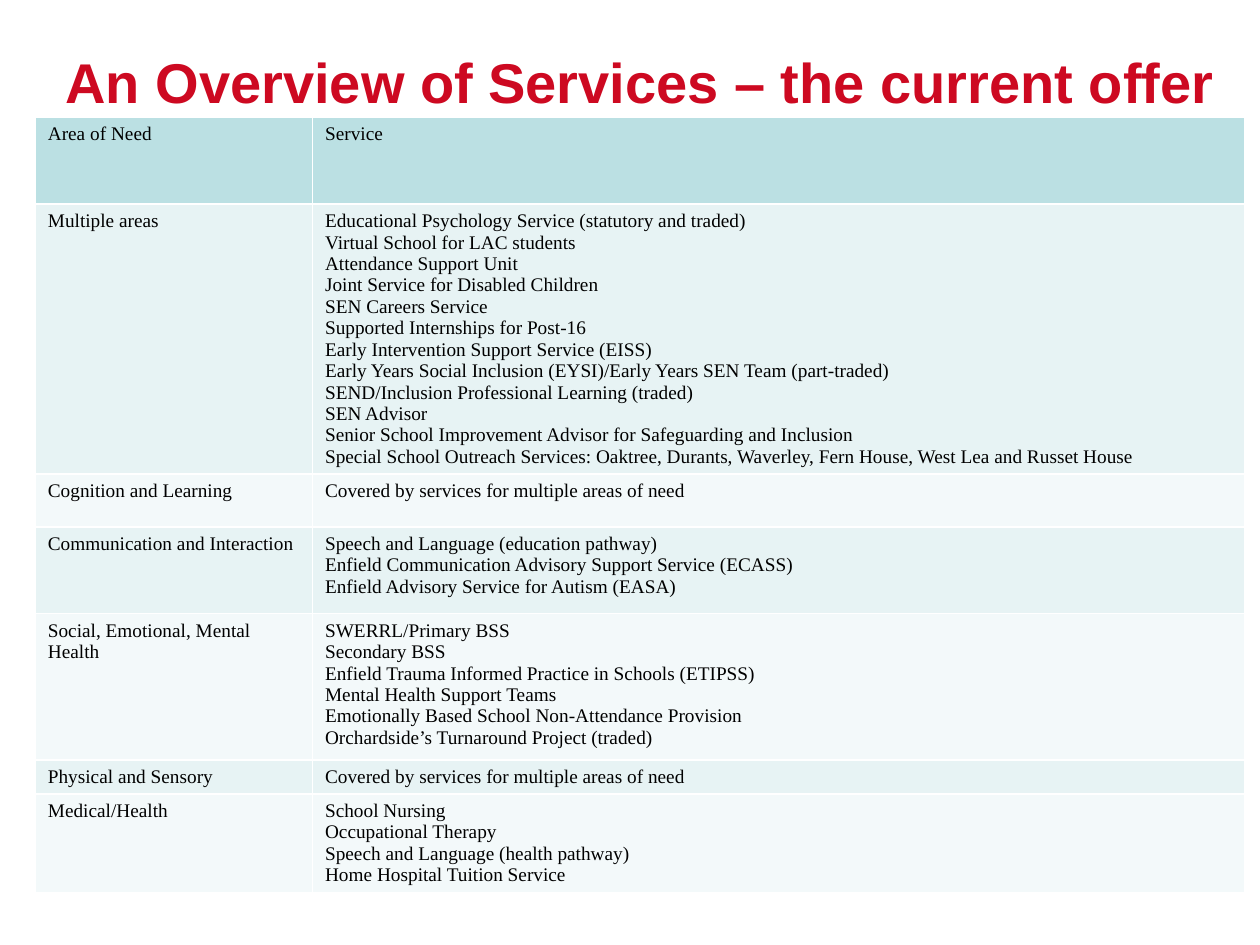
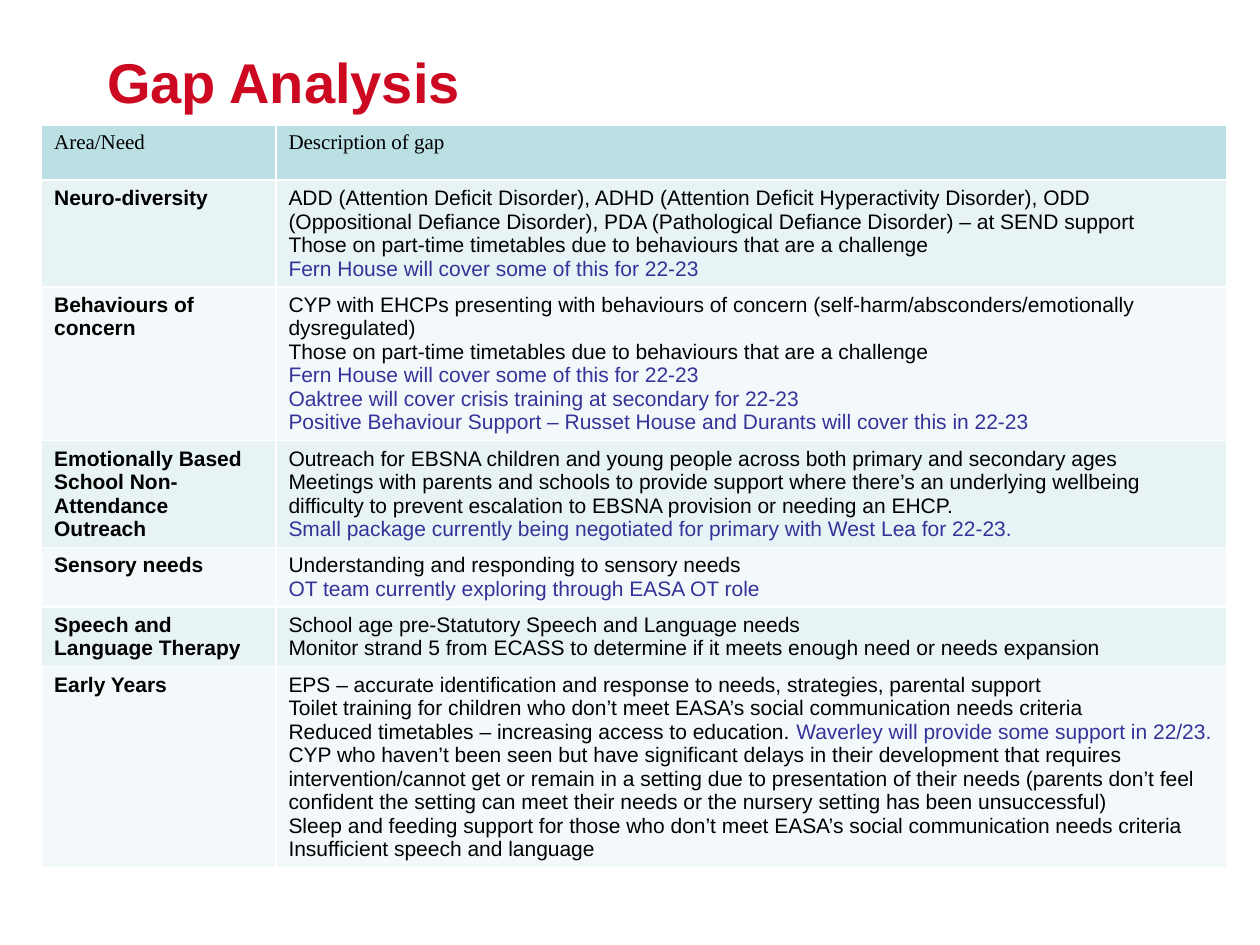
from pptx import Presentation, util as u
from pptx.dml.color import RGBColor
from pptx.enum import text

COLOURS = {"title": "CD0921", "text": "000000", "update": "333399",
           "header": "BBE0E3", "odd": "E7F3F4", "even": "F3F9FA"}
SANS, SERIF = "Arial", "Times New Roman"
COVERED = "Covered by services for multiple areas of need"
PART_TIME = "Those on part-time timetables due to behaviours that are a challenge"
FERN_HOUSE = ("Fern House will cover some of this for 22-23", "update")

SERVICES = [
    ("Area of Need", ["Service"]),
    ("Multiple areas", [
        "Educational Psychology Service (statutory and traded)",
        "Virtual School for LAC students",
        "Attendance Support Unit",
        "Joint Service for Disabled Children",
        "SEN Careers Service",
        "Supported Internships for Post-16",
        "Early Intervention Support Service (EISS)",
        "Early Years Social Inclusion (EYSI)/Early Years SEN Team (part-traded)",
        "SEND/Inclusion Professional Learning (traded)",
        "SEN Advisor",
        "Senior School Improvement Advisor for Safeguarding and Inclusion",
        "Special School Outreach Services: Oaktree, Durants, Waverley, Fern House, "
        "West Lea and Russet House"]),
    ("Cognition and Learning", [COVERED]),
    ("Communication and Interaction", [
        "Speech and Language (education pathway)",
        "Enfield Communication Advisory Support Service (ECASS)",
        "Enfield Advisory Service for Autism (EASA)"]),
    ("Social, Emotional, Mental Health", [
        "SWERRL/Primary BSS",
        "Secondary BSS",
        "Enfield Trauma Informed Practice in Schools (ETIPSS)",
        "Mental Health Support Teams",
        "Emotionally Based School Non-Attendance Provision",
        "Orchardside’s Turnaround Project (traded)"]),
    ("Physical and Sensory", [COVERED]),
    ("Medical/Health", [
        "School Nursing",
        "Occupational Therapy",
        "Speech and Language (health pathway)",
        "Home Hospital Tuition Service"]),
]

GAPS = [
    ("Area/Need", ["Description of gap"]),
    ("Neuro-diversity", [
        "ADD (Attention Deficit Disorder), ADHD (Attention Deficit Hyperactivity Disorder), "
        "ODD (Oppositional Defiance Disorder), PDA (Pathological Defiance Disorder) "
        "– at SEND support",
        PART_TIME,
        [FERN_HOUSE]]),
    ("Behaviours of concern", [
        "CYP with EHCPs presenting with behaviours of concern "
        "(self-harm/absconders/emotionally dysregulated)",
        PART_TIME,
        [FERN_HOUSE],
        [("Oaktree will cover crisis training at secondary for 22-23", "update")],
        [("Positive Behaviour Support – Russet House and Durants will cover this in 22-23",
          "update")]]),
    ("Emotionally Based School Non-Attendance Outreach", [
        "Outreach for EBSNA children and young people across both primary and secondary ages",
        "Meetings with parents and schools to provide support where there’s an underlying "
        "wellbeing difficulty to prevent escalation to EBSNA provision or needing an EHCP.",
        [("Small package currently being negotiated for primary with West Lea for 22-23.",
          "update")]]),
    ("Sensory needs", [
        "Understanding and responding to sensory needs",
        [("OT team currently exploring through EASA OT role", "update")]]),
    ("Speech and Language Therapy", [
        "School age pre-Statutory Speech and Language needs",
        "Monitor strand 5 from ECASS to determine if it meets enough need or needs expansion"]),
    ("Early Years", [
        "EPS – accurate identification and response to needs, strategies, parental support",
        "Toilet training for children who don’t meet EASA’s social communication needs criteria",
        [("Reduced timetables – increasing access to education. ", "text"),
         ("Waverley will provide some support in 22/23.", "update")],
        "CYP who haven’t been seen but have significant delays in their development that "
        "requires intervention/cannot get or remain in a setting due to presentation of their "
        "needs (parents don’t feel confident the setting can meet their needs or the nursery "
        "setting has been unsuccessful)",
        "Sleep and feeding support for those who don’t meet EASA’s social communication needs "
        "criteria",
        "Insufficient speech and language"]),
]

SLIDES = [
    {"title": "An Overview of Services – the current offer", "title_span": (0.42, 9.47),
     "rows": SERVICES, "corner": (0.28, 0.93), "columns": (2.2, 7.4),
     "heights": (0.69, 0.83, 0.42, 0.69, 1.16, 0.24, 0.63),
     "size": 11, "body_font": SERIF, "bold_areas": False},
    {"title": "Gap Analysis", "title_span": (0.75, 8.92),
     "rows": GAPS, "corner": (0.33, 0.99), "columns": (1.86, 7.55),
     "heights": (0.44, 0.77, 0.6, 0.77, 0.44, 0.44, 0.44),
     "size": 12, "body_font": SANS, "bold_areas": True},
]


def write(frame, paragraphs, size, font=SANS, colour="text", bold=False):
    for index, content in enumerate(paragraphs):
        paragraph = frame.add_paragraph() if index else frame.paragraphs[0]
        paragraph.alignment = text.PP_ALIGN.LEFT
        runs = [(content, colour)] if isinstance(content, str) else content
        for words, run_colour in runs:
            run = paragraph.add_run()
            run.text = words
            run.font.name, run.font.size, run.font.bold = font, u.Pt(size), bold
            run.font.color.rgb = RGBColor.from_string(COLOURS[run_colour])


def add_title(slide, words, left, width):
    title = slide.shapes.title
    title.left, title.top = u.Inches(left), u.Inches(0.33)
    title.width, title.height = u.Inches(width), u.Inches(1.25)
    frame = title.text_frame
    frame.auto_size = text.MSO_AUTO_SIZE.NONE
    frame.vertical_anchor = text.MSO_ANCHOR.TOP
    frame.margin_top = u.Inches(0.05)
    write(frame, [words], 32, colour="title", bold=True)


def add_needs_table(slide, design):
    rows, columns, heights = design["rows"], design["columns"], design["heights"]
    left, top = design["corner"]
    table = slide.shapes.add_table(
        len(rows), len(columns), u.Inches(left), u.Inches(top),
        u.Inches(sum(columns)), u.Inches(sum(heights))).table
    for column, width in zip(table.columns, columns):
        column.width = u.Inches(width)
    for index, (area, details) in enumerate(rows):
        table.rows[index].height = u.Inches(heights[index])
        header = index == 0
        fill = "header" if header else "odd" if index % 2 else "even"
        for position, paragraphs in enumerate(([area], details)):
            cell = table.cell(index, position)
            cell.fill.solid()
            cell.fill.fore_color.rgb = RGBColor.from_string(COLOURS[fill])
            write(cell.text_frame, paragraphs, design["size"],
                  font=SERIF if header else design["body_font"],
                  bold=design["bold_areas"] and not header and position == 0)


def main():
    presentation = Presentation()
    presentation.slide_width, presentation.slide_height = u.Inches(10), u.Inches(7.5)
    for design in SLIDES:
        slide = presentation.slides.add_slide(presentation.slide_layouts[5])
        add_title(slide, design["title"], *design["title_span"])
        add_needs_table(slide, design)
    presentation.save("out.pptx")


if __name__ == "__main__":
    main()
